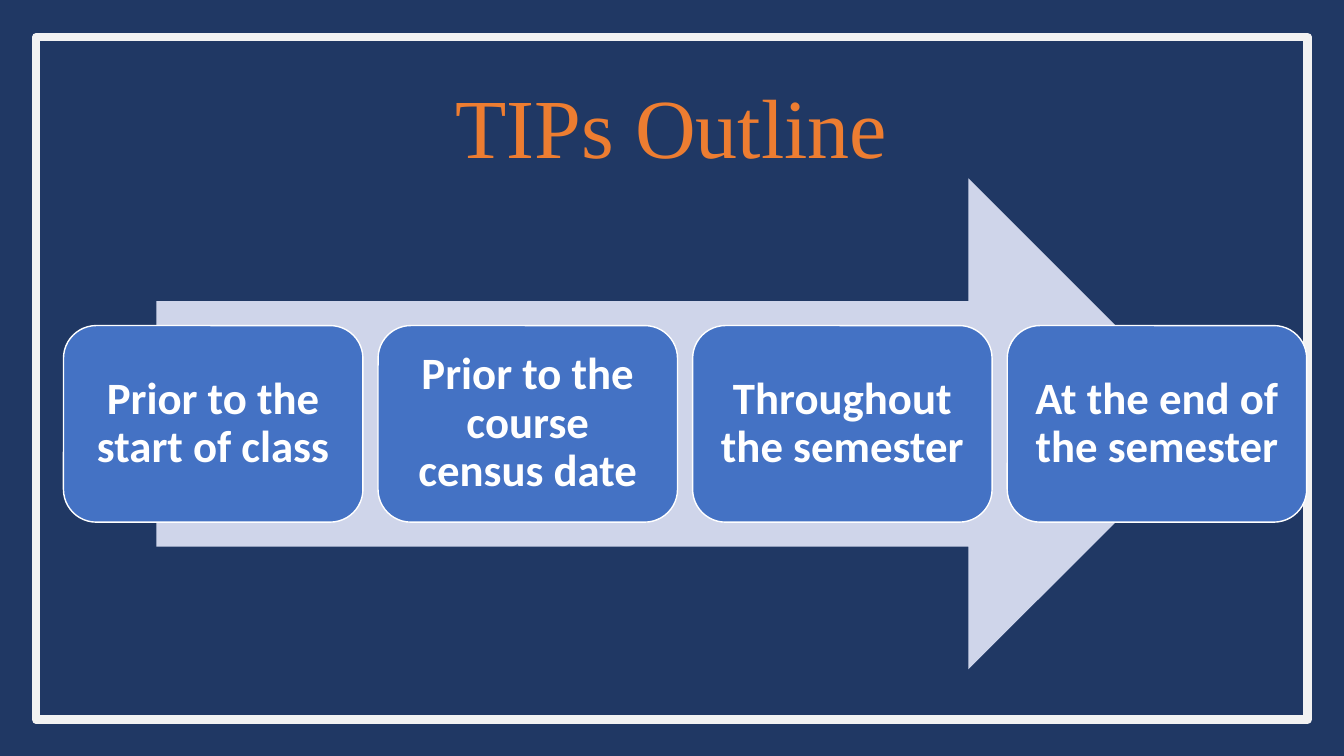
from pptx import Presentation
from pptx.dml.color import RGBColor
from pptx.enum.shapes import MSO_SHAPE as SHAPE
from pptx.enum.text import MSO_ANCHOR as ANCHOR, PP_ALIGN as ALIGN
from pptx.util import Inches, Pt

NAVY, ORANGE, WHITE = "203864", "ED7D31", "FFFFFF"
STAGES = [
    "Prior to the start of class",
    "Prior to the course census date",
    "Throughout the semester",
    "At the end of the semester",
]
STAGE_LEFT, STAGE_TOP, STAGE_W, STAGE_H = 0.63, 3.23, 2.97, 1.95
STAGE_STEP = 3.12


def rgb(value):
    return RGBColor.from_string(value)


def add_block(s, kind, box, fill, line=None, line_width=1):
    sp = s.shapes.add_shape(kind, *map(Inches, box))
    sp.shadow.inherit = False
    sp.fill.solid()
    sp.fill.fore_color.rgb = rgb(fill)
    if line:
        sp.line.color.rgb = rgb(line)
        sp.line.width = Pt(line_width)
    else:
        sp.line.fill.background()
    return sp


def set_text(sp, text, size, font, color, bold=False):
    tf = sp.text_frame
    tf.word_wrap = True
    tf.vertical_anchor = ANCHOR.MIDDLE
    tf.text = text
    p = tf.paragraphs[0]
    p.alignment = ALIGN.CENTER
    p.line_spacing = 0.9
    p.font.size = Pt(size)
    p.font.name = font
    p.font.bold = bold
    p.font.color.rgb = rgb(color)


def add_title(s, text):
    title = s.shapes.title
    title.left, title.top, title.width, title.height = map(
        Inches, (1, 0.61, 11.32, 1.38))
    set_text(title, text, 60, "Times New Roman", ORANGE)
    return title


def add_stage(s, index, text):
    box = (STAGE_LEFT + index * STAGE_STEP, STAGE_TOP, STAGE_W, STAGE_H)
    sp = add_block(s, SHAPE.ROUNDED_RECTANGLE, box, "4472C4", WHITE)
    set_text(sp, text, 32, "Calibri", WHITE, bold=True)
    tf = sp.text_frame
    tf.margin_left = tf.margin_right = Inches(0.13)
    tf.margin_top = tf.margin_bottom = Inches(0.13)


def main():
    prs = Presentation()
    prs.slide_width, prs.slide_height = Inches(13.33), Inches(7.5)
    s = prs.slides.add_slide(prs.slide_layouts[5])
    s.background.fill.solid()
    s.background.fill.fore_color.rgb = rgb(NAVY)

    frame = add_block(s, SHAPE.RECTANGLE, (0.36, 0.37, 12.61, 6.77),
                      NAVY, "F2F2F2", 6)
    title = add_title(s, "TIPs Outline")
    frame.element.addnext(title.element)  # keep the title above the filled frame

    add_block(s, SHAPE.RIGHT_ARROW, (1.55, 1.77, 10.49, 4.87), "CFD5EA")
    for index, text in enumerate(STAGES):
        add_stage(s, index, text)
    prs.save("out.pptx")


if __name__ == "__main__":
    main()
